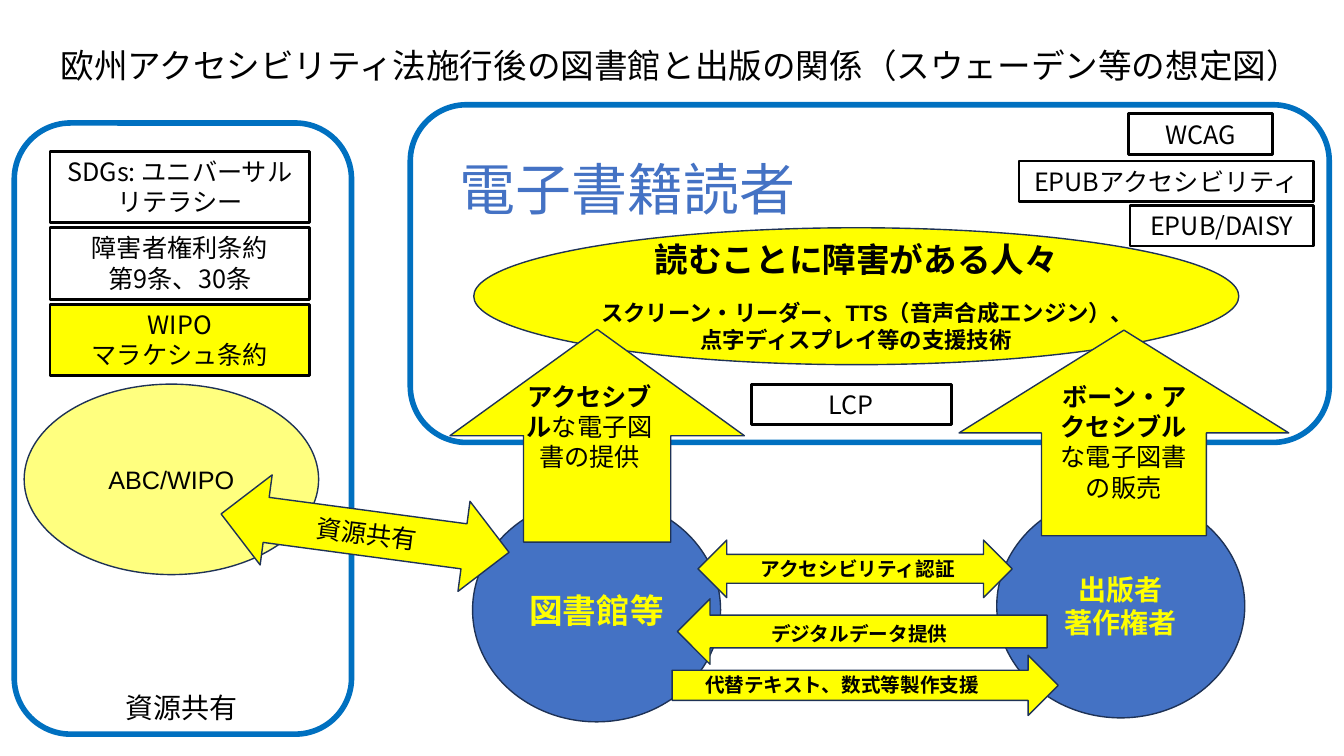
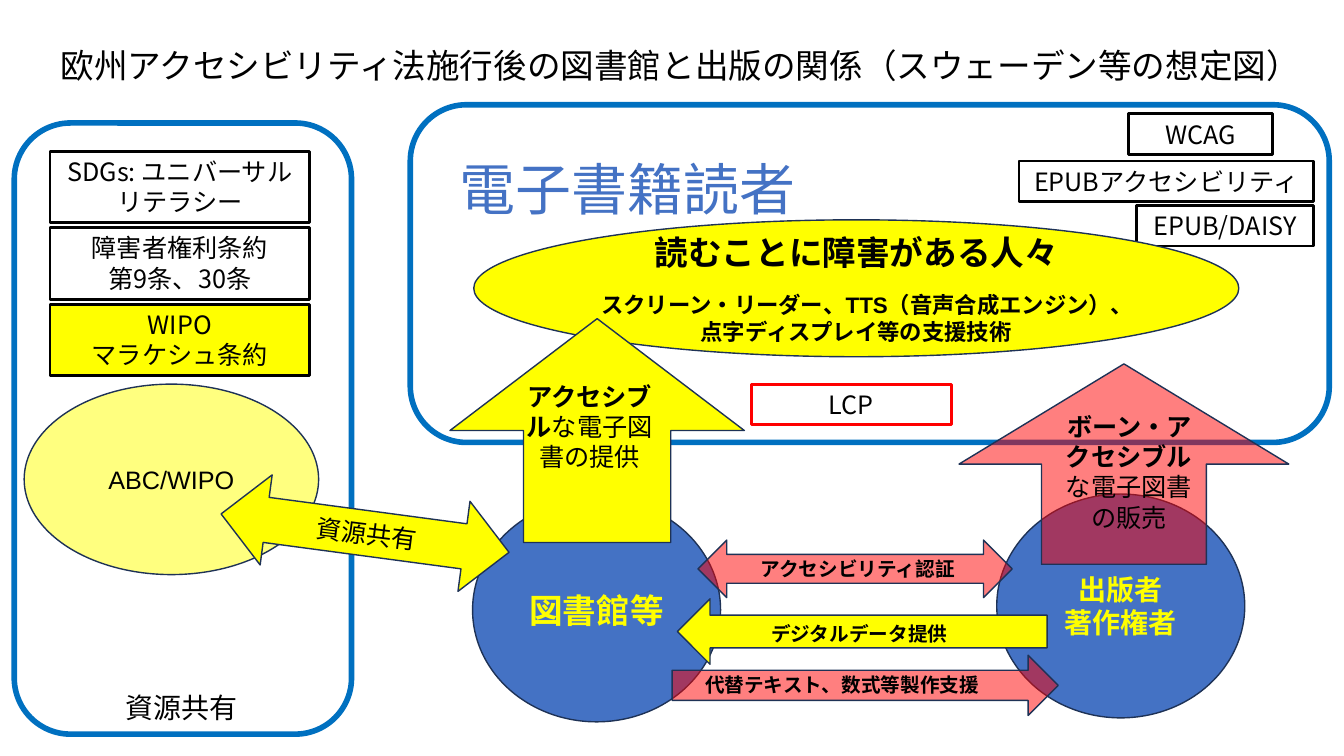
from dataclasses import dataclass

from lxml import etree
from pptx import Presentation, util as u
from pptx.dml.color import RGBColor
from pptx.enum import shapes, text
from pptx.oxml.ns import qn

KIND = shapes.MSO_SHAPE
MID = text.MSO_ANCHOR.MIDDLE
TOP = text.MSO_ANCHOR.TOP
LEFT = text.PP_ALIGN.LEFT
CENTER = text.PP_ALIGN.CENTER


@dataclass(frozen=True)
class Theme:
    blue: str = "4472C4"
    frame: str = "0070C0"
    edge: str = "1E3256"
    yellow: str = "FFFF00"
    red: str = "FF0000"
    black: str = "000000"
    latin: str = "Arial"
    cjk: str = "Noto Sans CJK JP"
    hero: int = 40
    head: int = 24
    mid: int = 20
    body: int = 18
    sub: int = 16
    small: int = 14
    lead: float = 1.2


@dataclass(frozen=True)
class Box:
    """A rectangle in centimetres."""
    x: float
    y: float
    w: float
    h: float

    def sub(self, x, y, w, h):
        return Box(self.x + x, self.y + y, w, h)

    def place(self):
        return [u.Cm(v) for v in (self.x, self.y, self.w, self.h)]


@dataclass(frozen=True)
class Plan:
    """What differs between the two slides."""
    sale: str
    alpha: int
    lcp: str
    daisy: float
    oval: float
    lend: tuple
    sell: tuple
    note: tuple


T = Theme()
PANEL = Box(0.36, 3.1, 8.5, 15.4)
READER = Box(10.34, 2.64, 23.16, 8.51)
NET = Box(11.91, 12.45, 19.46, 5.74)
TITLE = Box(1.27, 1, 32.08, 1.27)
PLANS = (
    Plan(T.yellow, 100, T.black, 4.62, 3.1, (-4.15, 5.36), (-4.13, 5.18), (14.48, -2.97)),
    Plan(T.red, 50, T.red, 4.45, 2.9, (-4.42, 5.64), (-3.28, 5.05), (14.61, -2.21)),
)


def put(thing, form):
    for name, value in form.items():
        setattr(thing, name, value)


def rgb(code):
    return RGBColor.from_string(code)


def write(frame, paras, size=T.body, font=T.cjk, color=T.black, bold=False,
          align=CENTER, anchor=TOP):
    """Fill a frame; a paragraph is a string or a pair (bold part, plain part)."""
    put(frame, dict(word_wrap=True, vertical_anchor=anchor,
                    auto_size=text.MSO_AUTO_SIZE.NONE))
    for i, item in enumerate(paras):
        para = frame.paragraphs[0] if i == 0 else frame.add_paragraph()
        put(para, dict(alignment=align, line_spacing=u.Pt(size * T.lead)))
        parts = [(item, bold)] if isinstance(item, str) else zip(item, (True, False))
        for words, heavy in parts:
            run = para.add_run()
            run.text = words
            run.font.color.rgb = rgb(color)
            put(run.font, dict(size=u.Pt(size), bold=heavy, name=font))
            east = etree.SubElement(run.font._element, qn("a:ea"))
            east.set("typeface", T.cjk)


def draw(slide, kind, box, fill=None, line=T.edge, width=1, alpha=100, turn=0):
    shape = slide.shapes.add_shape(kind, *box.place())
    put(shape, dict(rotation=turn))
    shape.shadow.inherit = False
    if fill:
        shape.fill.solid()
        shape.fill.fore_color.rgb = rgb(fill)
        if alpha < 100:
            tint = shape.fill._xPr.find(qn("a:solidFill"))[0]
            etree.SubElement(tint, qn("a:alpha")).set("val", str(alpha * 1000))
    else:
        shape.fill.background()
    shape.line.color.rgb = rgb(line)
    shape.line.width = u.Pt(width)
    return shape


def label(slide, box, *paras, turn=0, **form):
    area = slide.shapes.add_textbox(*box.place())
    area.rotation = turn
    write(area.text_frame, paras, **form)


def card(slide, box, *paras, fill=None, line=T.black):
    shape = draw(slide, KIND.RECTANGLE, box, fill, line, 2)
    write(shape.text_frame, paras)


def title(slide, box, words):
    head = slide.shapes.title
    put(head, dict(zip(("left", "top", "width", "height"), box.place())))
    write(head.text_frame, [words], size=T.head, align=LEFT)


def actors(slide, box):
    for x, y, size, names in ((0, 0.1, T.head, ["図書館等"]),
                              (13.21, 0, T.mid, ["出版者", "著作権者"])):
        disc = draw(slide, KIND.OVAL, box.sub(x, y, 6.25, 5.64), T.blue)
        write(disc.text_frame, names, size=size, font=T.latin,
              color=T.yellow, bold=True, anchor=MID)


def panel(slide, box):
    """Treaties and the shared collection, with the arrow to the library."""
    draw(slide, KIND.ROUNDED_RECTANGLE, box, line=T.frame, width=4)
    cards = ((None, "SDGs: ユニバーサルリテラシー"),
             (None, "障害者権利条約", "第9条、30条"),
             (T.yellow, "WIPO", "マラケシュ条約"))
    for i, (fill, *paras) in enumerate(cards):
        card(slide, box.sub(0.9, 0.71 + 1.93 * i, 6.55, 1.8), *paras, fill=fill)
    pool = draw(slide, KIND.OVAL, box.sub(0.25, 6.58, 7.42, 4.8), T.yellow, alpha=50)
    write(pool.text_frame, ["ABC/WIPO"], font=T.latin, anchor=MID)
    draw(slide, KIND.LEFT_RIGHT_ARROW, box.sub(5.18, 9.19, 7.32, 2.29),
         T.yellow, turn=7.6)
    label(slide, box.sub(7.37, 9.88, 3.63, 1.02), "資源共有", turn=7.3, align=LEFT)
    label(slide, box.sub(-0.28, 14.17, 8.99, 1.12), "資源共有",
          size=T.mid, font=T.latin)


def reader(slide, box, plan):
    right = 22.76
    for x, y, w, words in ((18.11, 0.23, 3.61, "WCAG"),
                           (right - 7.42, 1.42, 7.42, "EPUBアクセシビリティ"),
                           (right - plan.daisy, 2.54, plan.daisy, "EPUB/DAISY")):
        card(slide, box.sub(x, y, w, 1.02), words)
    oval = draw(slide, KIND.OVAL, box.sub(1.6, plan.oval, 19.28, 3.45), T.yellow)
    frame = oval.text_frame
    put(frame, dict(margin_top=0, margin_bottom=0))
    write(frame, ["読むことに障害がある人々",
                  "スクリーン・リーダー、TTS（音声合成エンジン）、点字ディスプレイ等の支援技術"],
          size=T.sub, font=T.latin, bold=True, anchor=MID)
    lead, tech = frame.paragraphs
    lead.line_spacing = u.Pt(T.head * T.lead)
    lead.runs[0].font.size = u.Pt(T.head)
    tech.space_before = u.Pt(14)
    draw(slide, KIND.ROUNDED_RECTANGLE, box, line=T.frame, width=4)
    label(slide, box.sub(0.99, 1.12, 9.6, 1.96), "電子書籍読者",
          size=T.hero, font=T.latin, color=T.blue, align=LEFT)
    card(slide, box.sub(8.59, 7.04, 5.05, 1.02), "LCP", line=plan.lcp)


def supply(slide, box, plan):
    """The two upward arrows from library and publisher to the readers."""
    top, high = plan.lend
    draw(slide, KIND.UP_ARROW, box.sub(-0.57, top, 7.42, high), T.yellow)
    label(slide, box.sub(1.07, -2.97, 3.76, 2.57), ("アクセシブル", "な電子図書の提供"))
    top, high = plan.sell
    draw(slide, KIND.UP_ARROW, box.sub(12.26, top, 8.31, high),
         plan.sale, alpha=plan.alpha)
    label(slide, box.sub(*plan.note, 3.86, 3.33),
          ("ボーン・アクセシブル", "な電子図書の販売"), font=T.latin)


def trade(slide, box, plan):
    """The three arrows between library and publisher."""
    sale = (plan.sale, plan.alpha)
    rows = (
        (KIND.LEFT_RIGHT_ARROW, (5.68, 1.16, 7.92, 1.45), sale,
         (7.01, 1.47, 5.54), LEFT, "アクセシビリティ認証"),
        (KIND.LEFT_ARROW, (5.16, 2.64, 9.32, 1.65), (T.yellow, 100),
         (6.43, 3.1, 6.63), CENTER, "デジタルデータ提供"),
        (KIND.RIGHT_ARROW, (5.03, 4.06, 9.73, 1.52), sale,
         (5.61, 4.39, 7.59), LEFT, "代替テキスト、数式等製作支援"),
    )
    for kind, spot, (fill, alpha), area, align, words in rows:
        draw(slide, kind, box.sub(*spot), fill, alpha=alpha)
        label(slide, box.sub(*area, 0.86), words, size=T.small, bold=True, align=align)


def main():
    deck = Presentation()
    put(deck, dict(slide_width=u.Cm(33.87), slide_height=u.Cm(19.05)))
    for plan in PLANS:
        slide = deck.slides.add_slide(deck.slide_layouts[5])
        title(slide, TITLE,
              "欧州アクセシビリティ法施行後の図書館と出版の関係（スウェーデン等の想定図）")
        actors(slide, NET)
        panel(slide, PANEL)
        reader(slide, READER, plan)
        supply(slide, NET, plan)
        trade(slide, NET, plan)
    deck.save("out.pptx")


if __name__ == "__main__":
    main()
